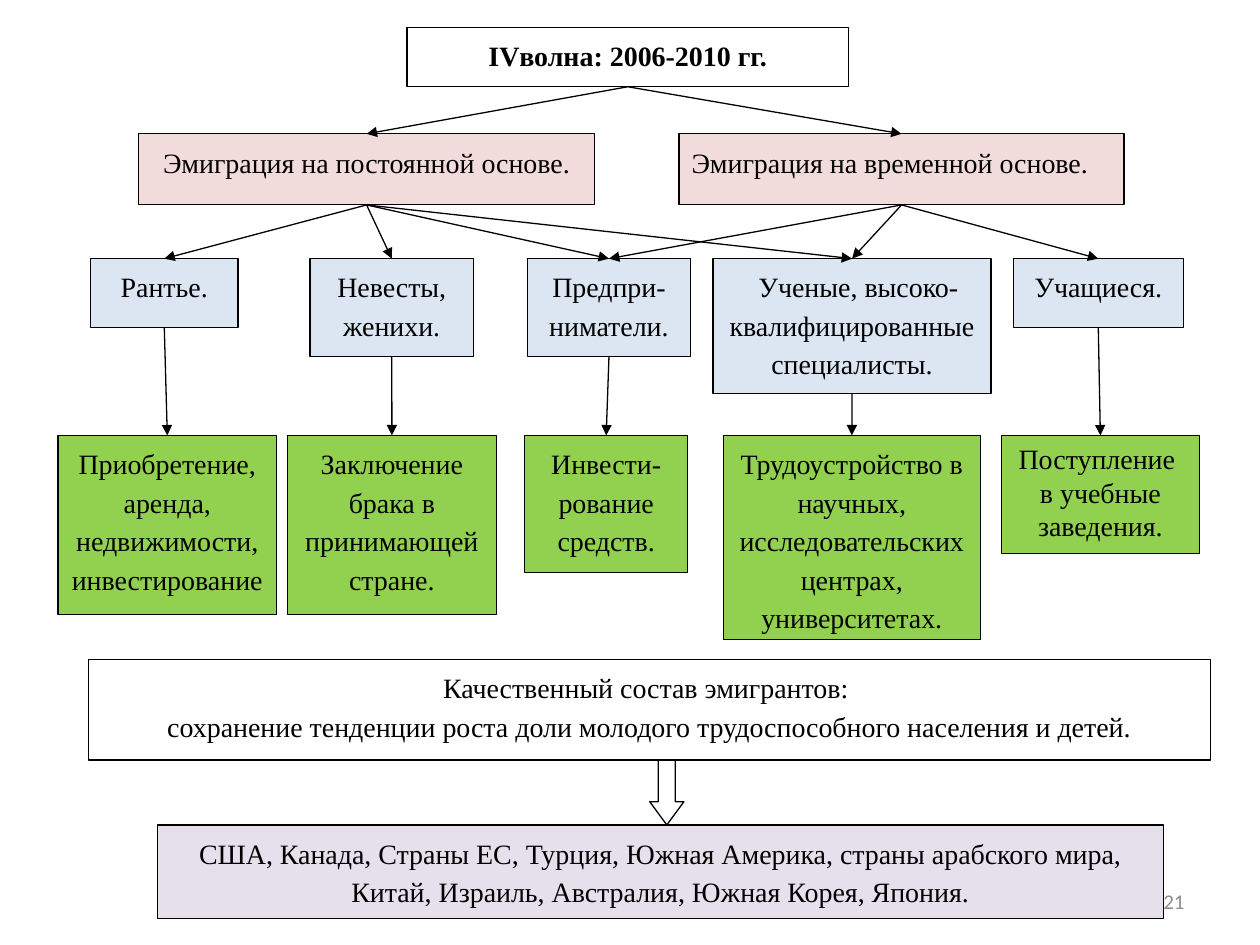
from lxml import etree
from pptx import Presentation
from pptx.dml.color import RGBColor
from pptx.enum import shapes, text
from pptx.oxml import ns
from pptx.util import Pt

COLORS = {
    "ink": "000000", "paper": "FFFFFF", "rose": "F2DCDB", "blue": "DCE6F2",
    "green": "92D050", "lilac": "E6E0EC", "gray": "8C8C8C",
}
BOTTOM, TOP = 2, 0
CENTER, LEFT, RIGHT = text.PP_ALIGN.CENTER, text.PP_ALIGN.LEFT, text.PP_ALIGN.RIGHT


def color(name):
    return RGBColor.from_string(COLORS[name])


class Diagram:
    """Holds the style and the slide that is being filled."""
    font, size, line_width = "Times New Roman", 16, 0.75

    def __init__(self, deck):
        self.page = deck.slides.add_slide(deck.slide_layouts[5])

    def paint(self, shape, fill):
        shape.fill.solid()
        shape.fill.fore_color.rgb = color(fill)
        shape.line.color.rgb = color("ink")
        shape.line.width = Pt(self.line_width)

    def set_words(self, shape, words, align=CENTER, spacing=1.15, after=10, bold=False,
                  font=None, size=None, ink="ink", anchor=text.MSO_ANCHOR.TOP):
        frame = shape.text_frame
        frame.text = words
        frame.word_wrap = True
        frame.auto_size = text.MSO_AUTO_SIZE.NONE
        frame.vertical_anchor = anchor
        for para in frame.paragraphs:
            para.alignment = align
            para.line_spacing = spacing
            para.space_before, para.space_after = Pt(0), Pt(after)
            for span in para.runs:
                span.font.name = font or self.font
                span.font.size = Pt(size or self.size)
                span.font.bold = bold
                span.font.color.rgb = color(ink)

    def title(self, words, area):
        box = self.page.shapes.title
        box.left, box.top, box.width, box.height = map(Pt, area)
        self.paint(box, "paper")
        self.set_words(box, words, bold=True)
        return box

    def shape(self, kind, area, fill):
        shape = self.page.shapes.add_shape(kind, *map(Pt, area))
        shape.shadow.inherit = False
        self.paint(shape, fill)
        return shape

    def box(self, words, area, fill, **style):
        box = self.shape(shapes.MSO_SHAPE.RECTANGLE, area, fill)
        self.set_words(box, words, **style)
        return box

    def arrow(self, source, target):
        """Join the bottom of source to the top of target."""
        line = self.page.shapes.add_connector(shapes.MSO_CONNECTOR.STRAIGHT, 0, 0, 0, 0)
        line.begin_connect(source, BOTTOM)
        line.end_connect(target, TOP)
        line.line.color.rgb = color("ink")
        line.line.width = Pt(self.line_width)
        properties = line._element.spPr
        outline = properties.find(ns.qn("a:ln"))
        etree.SubElement(outline, ns.qn("a:tailEnd"), type="triangle")
        etree.SubElement(properties, ns.qn("a:effectLst"))

    def down_arrow(self, area):
        arrow = self.shape(shapes.MSO_SHAPE.DOWN_ARROW, area, "paper")
        arrow.adjustments[0], arrow.adjustments[1] = 0.5, 0.68

    def page_number(self, number, area):
        label = self.page.shapes.add_textbox(*map(Pt, area))
        self.set_words(label, number, align=RIGHT, spacing=1, after=0, font="Calibri",
                       size=12, ink="gray", anchor=text.MSO_ANCHOR.MIDDLE)


def main():
    deck = Presentation()
    deck.slide_width, deck.slide_height = Pt(720), Pt(540)
    diagram = Diagram(deck)

    wave = diagram.title("IVволна: 2006-2010 гг.", (232.5, 15.8, 252.5, 33.8))

    basis_top, basis_height = 76.5, 40.6
    permanent = diagram.box("Эмиграция на постоянной основе.",
                            (79.2, basis_top, 260.6, basis_height), "rose")
    temporary = diagram.box("Эмиграция на временной основе.",
                            (388.1, basis_top, 254.2, basis_height), "rose", align=LEFT)

    # group name, left, width, height; then the same for its purpose
    group_top, purpose_top = 147.8, 248.8
    columns = [
        (("Рантье.", 51.8, 84.2, 39.4),
         ("Приобретение, аренда, недвижимости, инвестирование", 33.1, 125, 102.2)),
        (("Невесты, женихи.", 177.1, 93.6, 56),
         ("Заключение брака в принимающей стране.", 164.2, 119.5, 102.2)),
        (("Предпри-ниматели.", 301.5, 93, 56),
         ("Инвести-рование средств.", 299.9, 93, 78.4)),
        (("Ученые, высоко-квалифицированные специалисты.", 407.5, 158.8, 77),
         ("Трудоустройство в научных, исследовательских центрах, университетах.",
          413.3, 147, 116.6)),
        (("Учащиеся.", 579, 97.2, 39.2),
         ("Поступление \nв учебные заведения.", 572.2, 113.2, 67.5)),
    ]
    groups = []
    for (group, left, width, height), purpose in columns:
        box = diagram.box(group, (left, group_top, width, height), "blue")
        words, left, width, height = purpose
        style = {"spacing": 1, "after": 0} if "\n" in words else {}
        target = diagram.box(words, (left, purpose_top, width, height), "green", **style)
        diagram.arrow(box, target)
        groups.append(box)
    renters, spouses, investors, scholars, students = groups
    scholars.text_frame.paragraphs[0]._p.get_or_add_pPr().set("indent", str(Pt(7.2)))

    links = [
        (wave, (permanent, temporary)),
        (permanent, (renters, spouses, investors, scholars)),
        (temporary, (investors, scholars, students)),
    ]
    for source, targets in links:
        for target in targets:
            diagram.arrow(source, target)

    diagram.box("Качественный состав эмигрантов: \nсохранение тенденции роста доли "
                "молодого трудоспособного населения и детей.",
                (50.4, 376.8, 641.4, 57.6), "paper", after=0)
    diagram.down_arrow((371.3, 434.4, 19.5, 37))
    diagram.box("США, Канада, Страны ЕС, Турция, Южная Америка, страны арабского мира, "
                "Китай, Израиль, Австралия, Южная Корея, Япония.",
                (90, 471.4, 574.8, 53.6), "lilac")
    diagram.page_number("21", (516, 500.5, 168, 28.8))
    deck.save("out.pptx")


if __name__ == "__main__":
    main()
